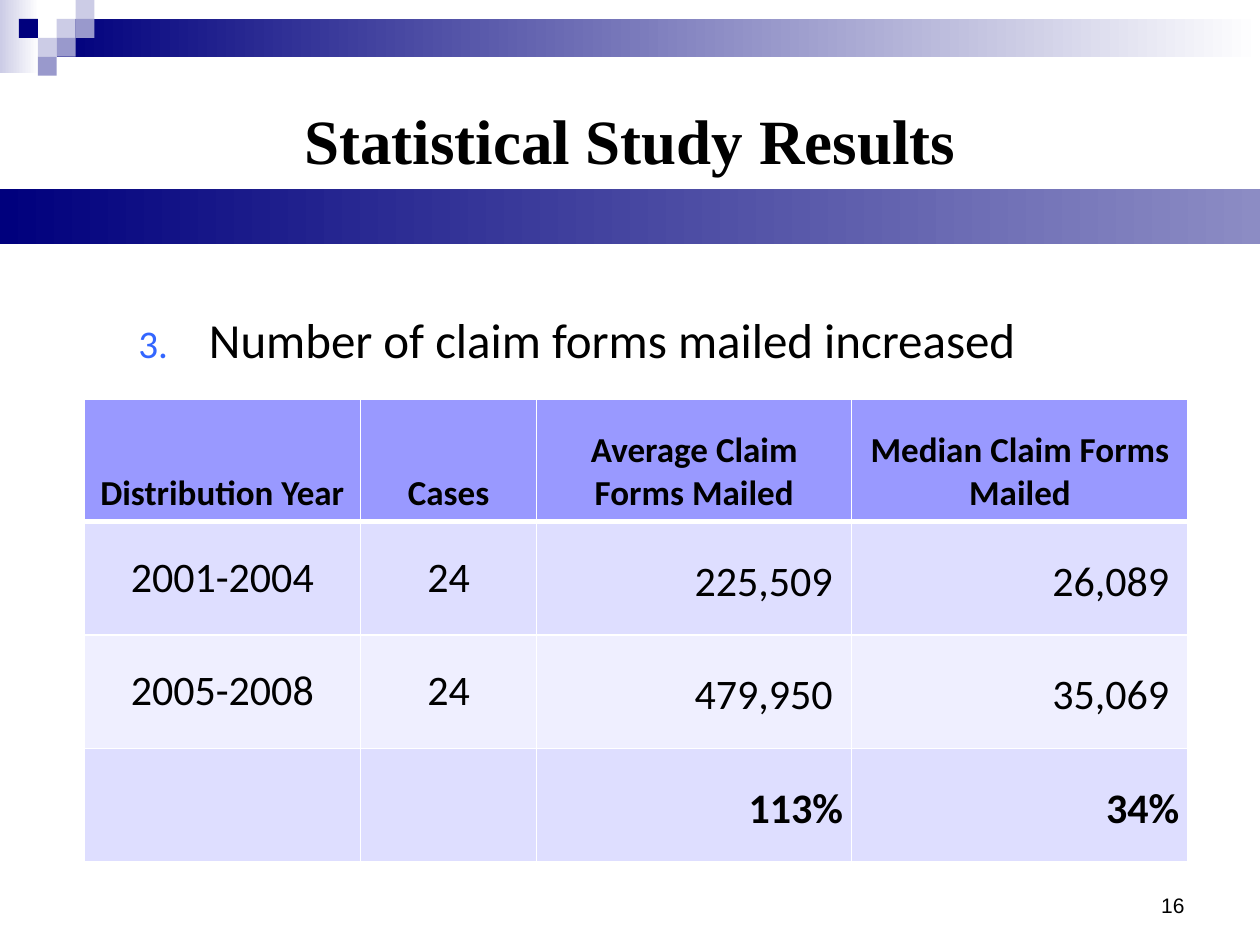
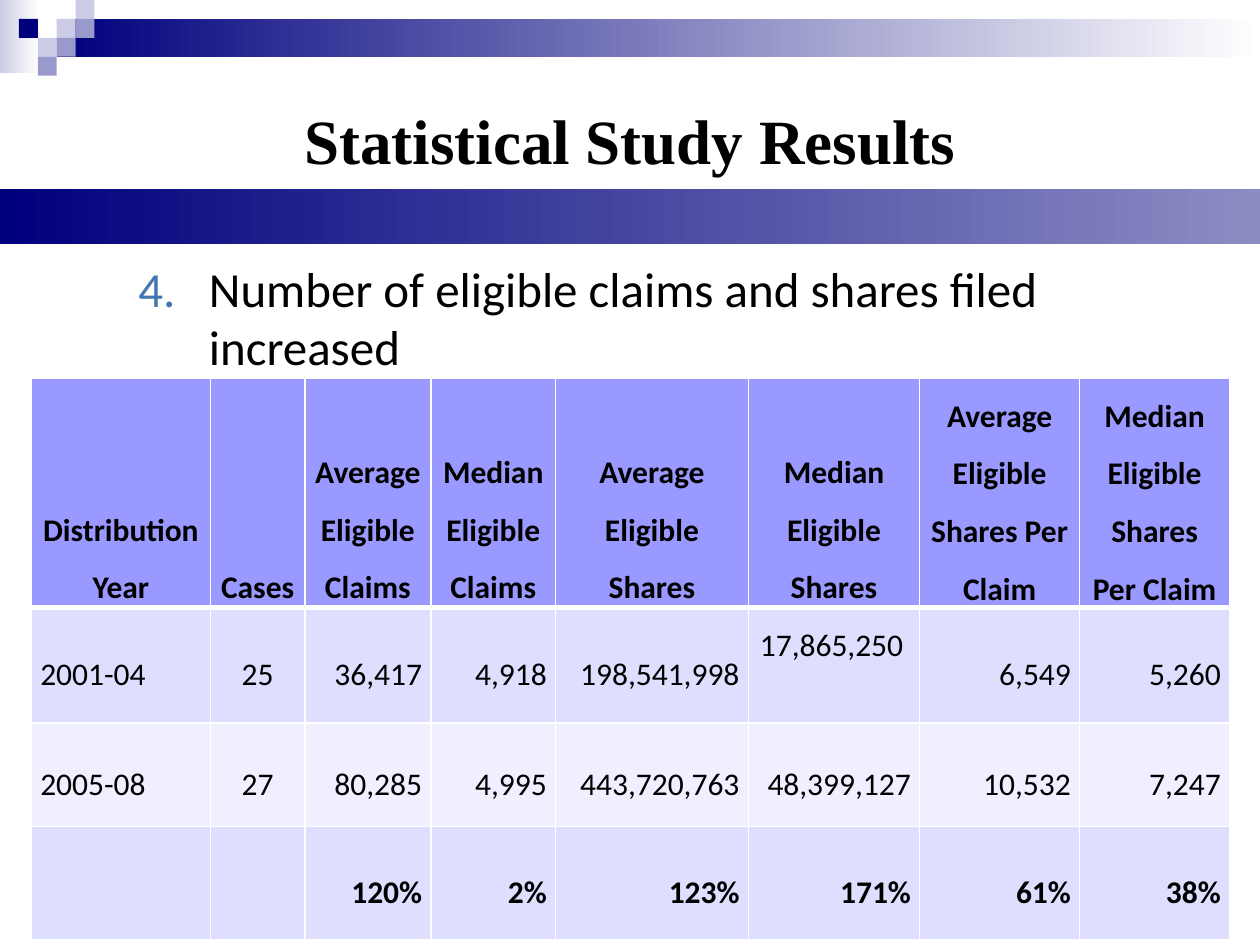
from dataclasses import dataclass

import pptx
import pptx.dml.color
import pptx.enum.shapes
import pptx.enum.text
import pptx.oxml.ns
import pptx.util
from lxml import etree

Inches = pptx.util.Inches
ALIGN = pptx.enum.text.PP_ALIGN
ANCHOR = pptx.enum.text.MSO_ANCHOR
LEFT, CENTER, RIGHT = ALIGN.LEFT, ALIGN.CENTER, ALIGN.RIGHT


@dataclass(frozen=True)
class Theme:
    navy: str = "00007D"
    lavender: str = "CCCCE6"
    violet: str = "9999CC"
    white: str = "FFFFFF"
    band_end: str = "8C8CC4"
    black: str = "000000"
    header_fill: str = "9999FF"
    row_fills: tuple = ("DEDEFF", "EFEFFF")
    title_size: int = 36
    point_size: int = 28
    number_size: int = 12
    title_font: str = "Times New Roman"
    body_font: str = "Calibri"
    number_font: str = "Arial"


def rgb(color):
    return pptx.dml.color.RGBColor.from_string(color)


def set_all(target, values):
    for name, value in values.items():
        setattr(target, name, value)


def add_xml(parent, tag, **attributes):
    return etree.SubElement(parent, pptx.oxml.ns.qn(tag), attributes)


class Deck:
    MOSAIC_UNIT = 0.15
    # (column, row, theme colour) of each small square in the corner
    MOSAIC = (
        (3, 1, "lavender"), (4, 0, "lavender"), (4, 1, "violet"),
        (2, 2, "lavender"), (1, 1, "navy"), (3, 2, "violet"), (2, 3, "violet"),
    )

    def __init__(self, theme):
        self.theme = theme
        self.file = pptx.Presentation()
        set_all(self.file, {"slide_width": Inches(10), "slide_height": Inches(7.5)})
        self.slide = None

    def start_slide(self, title, number):
        """Open a slide with the shared corner, bands, title and number."""
        theme = self.theme
        self.slide = self.file.slides.add_slide(self.file.slide_layouts[6])
        self.rectangle((0, 0, 0.31, 0.58), theme.lavender, theme.white)
        self.rectangle((0.45, 0.15, 9.55, 0.3), theme.navy, theme.white)
        unit = self.MOSAIC_UNIT
        for column, row, color in self.MOSAIC:
            self.rectangle((column * unit, row * unit, unit, unit), getattr(theme, color))
        self.text(str(number), (7.17, 6.83, 2.33, 0.5), theme.number_font,
                  theme.number_size, align=RIGHT, anchor=ANCHOR.BOTTOM)
        self.rectangle((0, 1.5, 10, 0.44), theme.navy, theme.band_end)
        self.text(title, (0, 0.84, 10, 0.62), theme.title_font, theme.title_size,
                  bold=True, align=CENTER, anchor=ANCHOR.MIDDLE, spacing=0.85)

    def rectangle(self, box, color, end_color=None):
        """Draw a borderless rectangle, fading to end_color if one is given."""
        shape = self.slide.shapes.add_shape(
            pptx.enum.shapes.MSO_SHAPE.RECTANGLE, *map(Inches, box))
        shape.shadow.inherit = False
        shape.line.fill.background()
        if end_color is None:
            shape.fill.solid()
            shape.fill.fore_color.rgb = rgb(color)
            return
        shape.fill.gradient()
        shape.fill.gradient_angle = 0
        for stop, stop_color in zip(shape.fill.gradient_stops, (color, end_color)):
            stop.color.rgb = rgb(stop_color)

    def fill_frame(self, frame, words, font, size, bold=False, align=LEFT, spacing=1.0):
        frame.text = words
        for paragraph in frame.paragraphs:
            set_all(paragraph, {"alignment": align, "line_spacing": spacing})
            for run in paragraph.runs:
                set_all(run.font, {"name": font, "size": pptx.util.Pt(size), "bold": bold})
                run.font.color.rgb = rgb(self.theme.black)

    def text(self, words, box, font, size, anchor=ANCHOR.TOP, **style):
        frame = self.slide.shapes.add_textbox(*map(Inches, box)).text_frame
        set_all(frame, {"word_wrap": True, "vertical_anchor": anchor})
        self.fill_frame(frame, words, font, size, **style)
        return frame

    def numbered_point(self, words, box, number, color, scale=100, spacing=1.0):
        frame = self.text(words, box, self.theme.body_font, self.theme.point_size,
                          spacing=spacing)
        properties = frame.paragraphs[0]._p.get_or_add_pPr()
        properties.set("marL", str(Inches(1.06)))
        properties.set("indent", str(Inches(-0.56)))
        add_xml(add_xml(properties, "a:buClr"), "a:srgbClr", val=color)
        add_xml(properties, "a:buSzPct", val=str(scale * 1000))
        add_xml(properties, "a:buFont", typeface=self.theme.body_font)
        add_xml(properties, "a:buAutoNum", type="arabicPeriod", startAt=str(number))

    def border(self, cell, bottom):
        properties = cell._tc.get_or_add_tcPr()
        sides = {"a:lnL": 1, "a:lnR": 1, "a:lnT": 1, "a:lnB": bottom}
        for position, (tag, width) in enumerate(sides.items()):
            line = etree.Element(pptx.oxml.ns.qn(tag), w=str(pptx.util.Pt(width)))
            add_xml(add_xml(line, "a:solidFill"), "a:srgbClr", val=self.theme.white)
            properties.insert(position, line)

    def table(self, rows, origin, widths, heights, style_for):
        """Draw a table; style_for(row, column) gives margins, anchor and text style."""
        size = (sum(widths), sum(heights))
        table = self.slide.shapes.add_table(
            len(rows), len(widths), *map(Inches, origin + size)).table
        set_all(table, {"first_row": False, "horz_banding": False})
        for column, width in zip(table.columns, widths):
            column.width = Inches(width)
        for r, (row, height) in enumerate(zip(rows, heights)):
            table.rows[r].height = Inches(height)
            for c, words in enumerate(row):
                cell = table.cell(r, c)
                cell.fill.solid()
                cell.fill.fore_color.rgb = rgb(
                    self.theme.row_fills[(r - 1) % 2] if r else self.theme.header_fill)
                self.border(cell, bottom=1 if r else 3)
                layout, style = style_for(r, c)
                set_all(cell, layout)
                if words:
                    self.fill_frame(cell.text_frame, words, self.theme.body_font, **style)


def margins(side, vertical, right=None):
    return {"margin_left": Inches(side), "margin_right": Inches(right or side),
            "margin_top": Inches(vertical), "margin_bottom": Inches(vertical)}


def mailed_style(row, column):
    if row == 0:
        return ({**margins(0.1, 0.05), "vertical_anchor": ANCHOR.BOTTOM},
                {"size": 20, "bold": True, "align": CENTER})
    middle = {"vertical_anchor": ANCHOR.MIDDLE}
    if column < 2:
        return {**margins(0.1, 0.05), **middle}, {"size": 24, "align": CENTER}
    change = row == 3
    return ({**margins(0.07, 0, right=0.07 if change else 0.15), **middle},
            {"size": 24, "bold": change, "align": RIGHT, "spacing": 1.15})


def eligible_style(row, column):
    style = {"size": 18, "bold": row in (0, 3), "spacing": 1.5}
    if row == 0:
        return ({**margins(0.07, 0), "vertical_anchor": ANCHOR.BOTTOM},
                {**style, "align": CENTER})
    raised = (row, column) == (1, 5)
    layout = {**margins(0.07, 0, right=0.13 if raised else 0.07),
              "vertical_anchor": ANCHOR.TOP if raised else ANCHOR.MIDDLE}
    return layout, {**style, "align": {0: LEFT, 1: CENTER}.get(column, RIGHT)}


MAILED = (
    ("Distribution Year", "Cases", "Average Claim Forms Mailed", "Median Claim Forms Mailed"),
    ("2001-2004", "24", "225,509", "26,089"),
    ("2005-2008", "24", "479,950", "35,069"),
    ("", "", "113%", "34%"),
)
ELIGIBLE = (
    ("Distribution Year", "Cases", "Average Eligible Claims", "Median Eligible Claims",
     "Average Eligible Shares", "Median Eligible Shares",
     "Average\nEligible\nShares Per\nClaim", "Median\nEligible Shares Per Claim"),
    ("2001-04", "25", "36,417", "4,918", "198,541,998", "17,865,250", "6,549", "5,260"),
    ("2005-08", "27", "80,285", "4,995", "443,720,763", "48,399,127", "10,532", "7,247"),
    ("", "", "120%", "2%", "123%", "171%", "61%", "38%"),
)
TITLE = "Statistical Study Results"


def main():
    deck = Deck(Theme())

    deck.start_slide(TITLE, 16)
    deck.numbered_point("Number of claim forms mailed increased", (0.5, 2.17, 8.22, 0.9),
                        3, "3366FF", scale=80, spacing=1.5)
    deck.table(MAILED, (0.67, 3.17), (2.19, 1.4, 2.5, 2.67), (0.97, 0.9, 0.9, 0.9),
               mailed_style)

    deck.start_slide(TITLE, 17)
    deck.numbered_point("Number of eligible claims and shares filed increased",
                        (0.5, 2, 8.22, 1), 4, "4476B2")
    deck.table(ELIGIBLE, (0.25, 3), (1.42, 0.75, 1, 0.99, 1.53, 1.36, 1.27, 1.19),
               (1.82, 0.92, 0.82, 0.9), eligible_style)

    deck.file.save("out.pptx")


if __name__ == "__main__":
    main()
